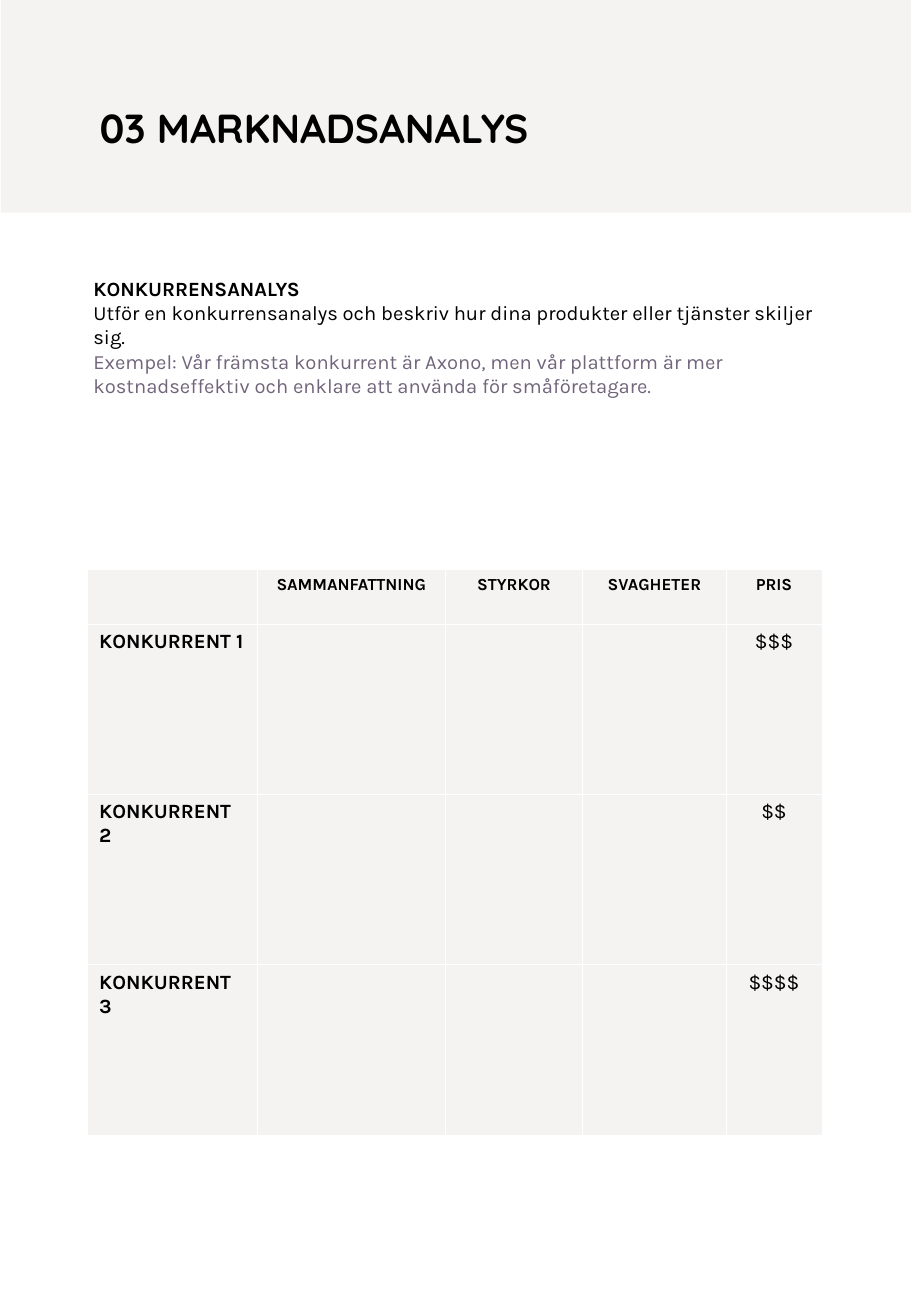
from lxml.etree import SubElement
from pptx import Presentation
from pptx.dml.color import RGBColor
from pptx.enum.shapes import MSO_SHAPE as Shape
from pptx.enum.text import MSO_AUTO_SIZE as AutoSize, PP_ALIGN as Align
from pptx.oxml.ns import qn
from pptx.util import Pt

COLORS = {"panel": "F4F3F2", "text": "000000", "example": "71657B", "border": "FFFFFF"}
BODY_FONT = "Karla"
TITLE_FONT = "Quicksand"

INTRO = [
    ("KONKURRENSANALYS", True, "text"),
    ("Utför en konkurrensanalys och beskriv hur dina produkter eller tjänster "
     "skiljer sig.", False, "text"),
    ("Exempel: Vår främsta konkurrent är Axono, men vår plattform är mer "
     "kostnadseffektiv och enklare att använda för småföretagare.", False, "example"),
]
HEADINGS = ["", "SAMMANFATTNING", "STYRKOR", "SVAGHETER", "PRIS"]
PRICES = ["$$$", "$$", "$$$$"]
COLUMN_WIDTHS = [100.8, 111.6, 81.4, 85, 56.9]
HEADER_HEIGHT, ROW_HEIGHT = 32.4, 101


def write(paragraph, text, size, bold=False, color="text", font=BODY_FONT, align=Align.LEFT):
    paragraph.text = text
    paragraph.alignment = align
    paragraph.font.name = font
    paragraph.font.size = Pt(size)
    paragraph.font.bold = bold
    paragraph.font.color.rgb = RGBColor.from_string(COLORS[color])


def add_panel(slide, left, top, width, height):
    panel = slide.shapes.add_shape(Shape.RECTANGLE, Pt(left), Pt(top), Pt(width), Pt(height))
    panel.shadow.inherit = False
    panel.fill.solid()
    panel.fill.fore_color.rgb = RGBColor.from_string(COLORS["panel"])
    panel.line.fill.background()


def add_text(slide, left, top, width, height, lines, size, font=BODY_FONT):
    frame = slide.shapes.add_textbox(Pt(left), Pt(top), Pt(width), Pt(height)).text_frame
    frame.word_wrap = True
    frame.auto_size = AutoSize.SHAPE_TO_FIT_TEXT
    for index, (text, bold, color) in enumerate(lines):
        paragraph = frame.add_paragraph() if index else frame.paragraphs[0]
        write(paragraph, text, size, bold, color, font)


def style_cell(cell):
    # Borders come before the fill in the cell properties
    properties = cell._tc.get_or_add_tcPr()
    for side in ("a:lnL", "a:lnR", "a:lnT", "a:lnB"):
        line = SubElement(properties, qn(side), w=str(Pt(0.25)))
        fill = SubElement(line, qn("a:solidFill"))
        SubElement(fill, qn("a:srgbClr"), val=COLORS["border"])
    cell.fill.solid()
    cell.fill.fore_color.rgb = RGBColor.from_string(COLORS["panel"])


def add_competitor_table(slide, left, top):
    row_heights = [HEADER_HEIGHT] + [ROW_HEIGHT] * len(PRICES)
    table = slide.shapes.add_table(
        len(row_heights), len(COLUMN_WIDTHS), Pt(left), Pt(top),
        Pt(sum(COLUMN_WIDTHS)), Pt(sum(row_heights))).table
    table.first_row = table.horz_banding = False
    for column, width in zip(table.columns, COLUMN_WIDTHS):
        column.width = Pt(width)
    for row, height in zip(table.rows, row_heights):
        row.height = Pt(height)
    for cell in table.iter_cells():
        style_cell(cell)

    # Header row
    for index, heading in enumerate(HEADINGS):
        write(table.cell(0, index).text_frame.paragraphs[0], heading, 10, True,
              align=Align.CENTER)

    # One row per competitor
    for number, price in enumerate(PRICES, start=1):
        name_cell, price_cell = table.cell(number, 0), table.cell(number, len(HEADINGS) - 1)
        write(name_cell.text_frame.paragraphs[0], f"KONKURRENT {number}", 12, True)
        write(price_cell.text_frame.paragraphs[0], price, 12, align=Align.CENTER)


def main():
    presentation = Presentation()
    presentation.slide_width, presentation.slide_height = Pt(540), Pt(779.8)
    slide = presentation.slides.add_slide(presentation.slide_layouts[6])

    # Title band
    add_panel(slide, 0.5, 0, 540, 126)
    add_text(slide, 52, 57.6, 437, 36, [("03 MARKNADSANALYS", True, "text")], 24, TITLE_FONT)

    # Introduction and comparison
    add_text(slide, 48.3, 160, 446.4, 65.5, INTRO, 12)
    add_competitor_table(slide, 51.6, 337.2)

    presentation.save("out.pptx")


if __name__ == "__main__":
    main()
